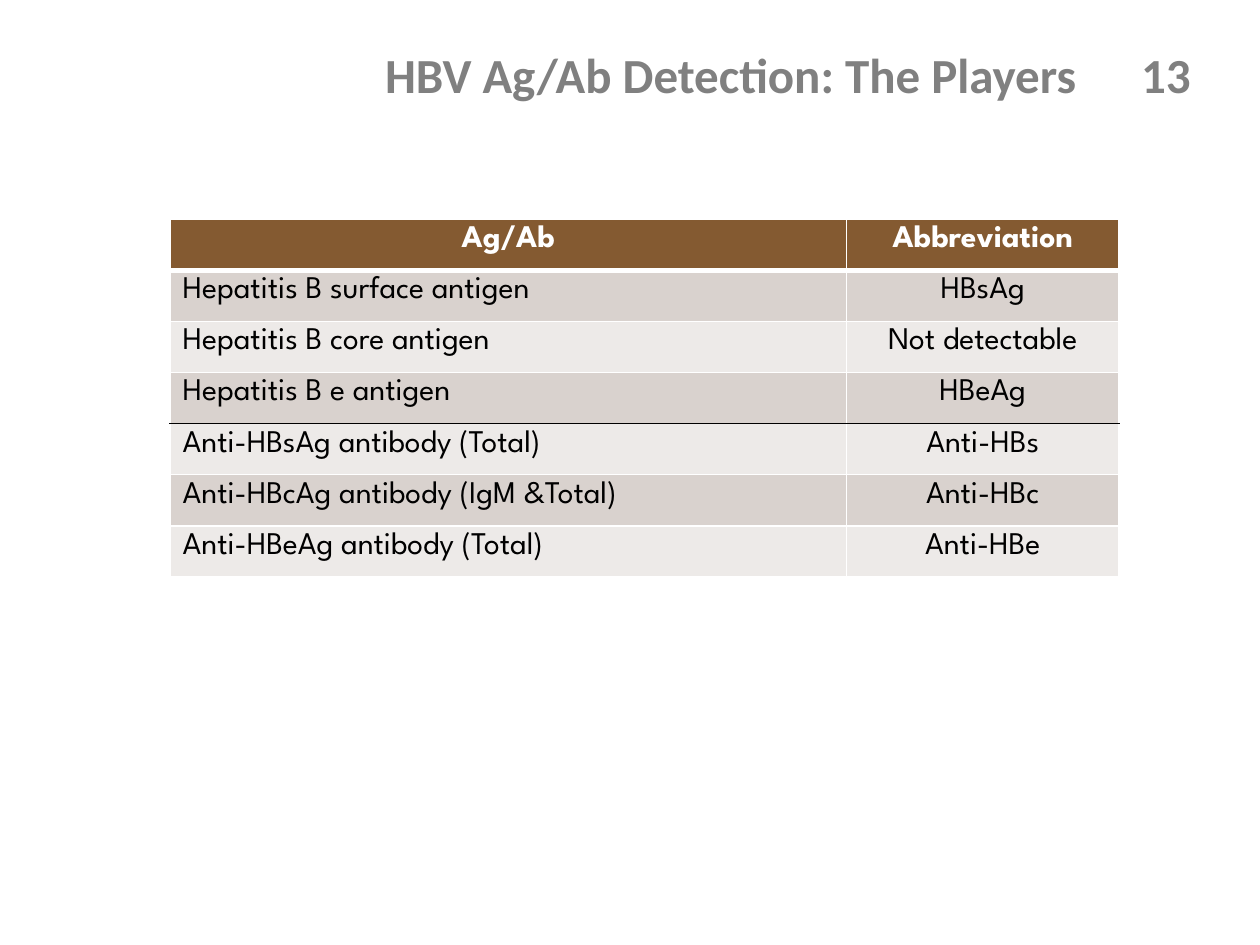
from lxml import etree
from pptx import Presentation
from pptx import util as u
from pptx.dml.color import RGBColor
from pptx.enum import text
from pptx.oxml import ns

TITLE = "HBV Ag/Ab Detection: The Players\t\t13"
ROWS = [
    ("Ag/Ab", "Abbreviation"),
    ("Hepatitis B surface antigen", "HBsAg"),
    ("Hepatitis B core antigen", "Not detectable"),
    ("Hepatitis B e antigen", "HBeAg"),
    ("Anti-HBsAg antibody (Total)", "Anti-HBs"),
    ("Anti-HBcAg antibody (IgM &Total)", "Anti-HBc"),
    ("Anti-HBeAg antibody (Total)", "Anti-HBe"),
]
LAST_ANTIGEN_ROW = 3
COLUMN_WIDTHS = (5.37, 2.16)
TABLE_LEFT, TABLE_TOP, TABLE_HEIGHT = 1.35, 1.74, 2.84

WHITE = RGBColor(0xFF, 0xFF, 0xFF)
BLACK = RGBColor(0, 0, 0)
GRAY = RGBColor(0x80, 0x80, 0x80)
BROWN = RGBColor(0x84, 0x5A, 0x31)
BANDS = (RGBColor(0xED, 0xEA, 0xE8), RGBColor(0xD9, 0xD2, 0xCE))


def format_font(paragraph, name, size, color, bold):
    for run in paragraph.runs:
        run.font.name = name
        run.font.size = u.Pt(size)
        run.font.color.rgb = color
        run.font.bold = bold


def set_borders(cell, borders):
    """Draw (side, color, points) borders; they must precede the cell's fill."""
    properties = cell._tc.get_or_add_tcPr()
    for position, (side, color, points) in enumerate(borders):
        line = etree.Element(ns.qn(f"a:ln{side}"), w=str(u.Pt(points)))
        fill = etree.SubElement(line, ns.qn("a:solidFill"))
        etree.SubElement(fill, ns.qn("a:srgbClr"), val=str(color))
        properties.insert(position, line)


def horizontal_border(row):
    """Return color and points of the line below a row (-1 is the table's top)."""
    if row == LAST_ANTIGEN_ROW:
        return BLACK, 1
    return WHITE, 3 if row == 0 else 1


def add_title(slide):
    title = slide.shapes.title
    title.left, title.top, title.width, title.height = map(u.Inches, (0.53, 0.23, 9.02, 0.64))
    frame = title.text_frame
    frame.text = TITLE
    frame.word_wrap = True
    frame.auto_size = text.MSO_AUTO_SIZE.NONE
    frame.vertical_anchor = text.MSO_ANCHOR.BOTTOM
    paragraph = frame.paragraphs[0]
    paragraph.alignment = text.PP_ALIGN.RIGHT
    format_font(paragraph, "Calibri", 28, GRAY, True)


def add_marker_table(slide):
    table = slide.shapes.add_table(
        len(ROWS), len(COLUMN_WIDTHS), u.Inches(TABLE_LEFT), u.Inches(TABLE_TOP),
        u.Inches(sum(COLUMN_WIDTHS)), u.Inches(TABLE_HEIGHT)).table
    for column, width in zip(table.columns, COLUMN_WIDTHS):
        column.width = u.Inches(width)
    for row, values in enumerate(ROWS):
        header = row == 0
        for column, value in enumerate(values):
            cell = table.cell(row, column)
            cell.text = value
            cell.fill.solid()
            cell.fill.fore_color.rgb = BROWN if header else BANDS[row % 2]
            set_borders(cell, [("L", WHITE, 1), ("R", WHITE, 1),
                               ("T", *horizontal_border(row - 1)),
                               ("B", *horizontal_border(row))])
            paragraph = cell.text_frame.paragraphs[0]
            centered = header or column == 1
            paragraph.alignment = text.PP_ALIGN.CENTER if centered else text.PP_ALIGN.LEFT
            format_font(paragraph, "League Spartan", 18, WHITE if header else BLACK, header)


def main():
    presentation = Presentation()
    presentation.slide_width, presentation.slide_height = u.Inches(10), u.Inches(7.5)
    slide = presentation.slides.add_slide(presentation.slide_layouts.get_by_name("Title Only"))
    slide.background.fill.solid()
    slide.background.fill.fore_color.rgb = WHITE
    add_title(slide)
    add_marker_table(slide)
    presentation.save("out.pptx")


if __name__ == "__main__":
    main()
